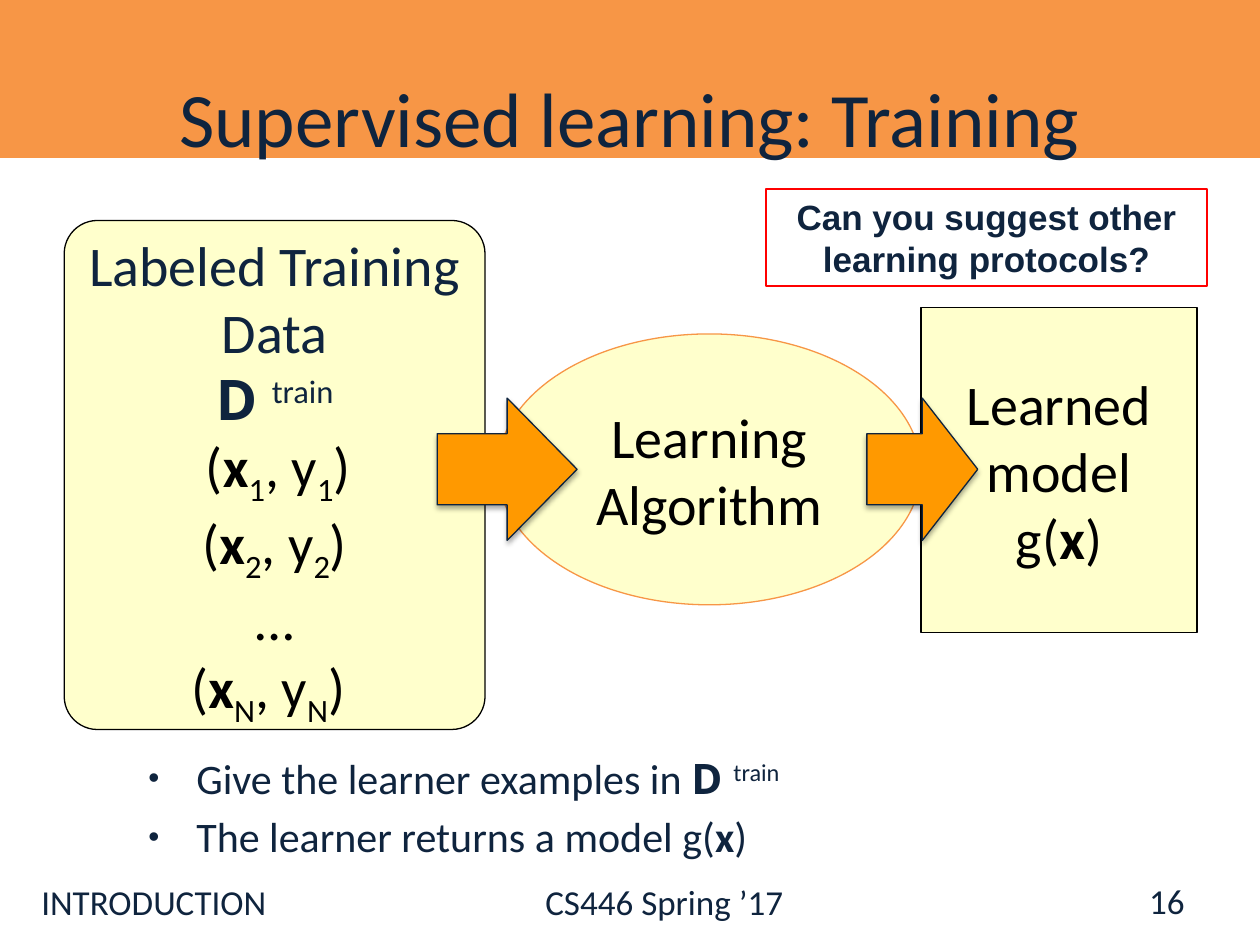
from lxml import etree
from pptx import Presentation, util as u
from pptx.dml.color import RGBColor
from pptx.enum import shapes, text
from pptx.oxml.ns import qn

NAVY, BLACK, ORANGE, CREAM = "0F243E", "000000", "F79646", "FFFFCC"
SHAPE, ALIGN, ANCHOR = shapes.MSO_SHAPE, text.PP_ALIGN, text.MSO_ANCHOR
BOLD, SUB, SUPER = {"bold": True}, {"base": -25}, {"base": 30}
D_TRAIN = [("D ", {"bold": True, "font": "Open Sans"}), ("train", SUPER)]
G_OF_X = [("g(", {}), ("x", BOLD), (")", {})]


def rgb(value):
    return RGBColor.from_string(value)


def inches(box):
    return [u.Inches(v) for v in box]


def child(parent, tag, **attrs):
    """Append a DrawingML element to parent."""
    return etree.SubElement(parent, qn(tag), {k: str(v) for k, v in attrs.items()})


def add_run(p, words, size, color, font="Calibri", bold=False, base=0):
    r = p.add_run()
    r.text = words
    r.font.size, r.font.name, r.font.bold = u.Pt(size), font, bold
    r.font.color.rgb = rgb(color)
    if base:
        r.font._element.set("baseline", str(base * 1000))


def write(sp, paragraphs, size=32, color=BLACK, font="Calibri", bold=False,
          align=ALIGN.CENTER, anchor=ANCHOR.MIDDLE, margins=(0.1, 0.05, 0.1, 0.05),
          bullet=False, before=0, tab=None):
    """Fill a shape; a paragraph is a string or a list of (text, format) runs."""
    tf = sp.text_frame
    tf.word_wrap, tf.vertical_anchor = True, anchor
    tf.margin_left, tf.margin_top, tf.margin_right, tf.margin_bottom = inches(margins)
    for i, runs in enumerate(paragraphs):
        p = tf.add_paragraph() if i else tf.paragraphs[0]
        p.alignment = align
        if i and before:
            p.space_before = u.Pt(before)
        if bullet:
            pPr = p._p.get_or_add_pPr()
            pPr.set("marL", str(u.Inches(0.38)))
            pPr.set("indent", str(u.Inches(-0.38)))
            child(pPr, "a:buSzPct", val=75000)
            child(pPr, "a:buFont", typeface="Arial")
            child(pPr, "a:buChar", char="•")
        if tab:
            tabs = child(p._p.get_or_add_pPr(), "a:tabLst")
            child(tabs, "a:tab", pos=u.Inches(tab), algn="l")
        for words, fmt in [(runs, {})] if isinstance(runs, str) else runs:
            if words == "\n":
                p.add_line_break()
            else:
                add_run(p, words, **{"size": size, "color": color, "font": font,
                                     "bold": bold, **fmt})


def add_box(s, kind, box, fill, line, width=0.75):
    sp = s.shapes.add_shape(kind, *inches(box))
    sp.shadow.inherit = False
    sp.fill.solid()
    sp.fill.fore_color.rgb = rgb(fill)
    sp.line.color.rgb = rgb(line)
    sp.line.width = u.Pt(width)
    return sp


def add_text(s, box, paragraphs, **fmt):
    write(s.shapes.add_textbox(*inches(box)), paragraphs, color=NAVY, **fmt)


def add_header(s, box):
    x, y, w, h = box
    add_box(s, SHAPE.RECTANGLE, box, ORANGE, ORANGE)
    add_text(s, (x + 0.5, y + 0.3, w - 1, h), ["Supervised learning: Training"], size=44)


def add_footer(s, box):
    x, y, w, h = box
    add_text(s, box, ["INTRODUCTION\tCS446 Spring ’17"], size=20,
             align=ALIGN.LEFT, anchor=ANCHOR.TOP, tab=4)
    add_text(s, (7.17, y + 0.01, 2.33, 0.4), ["16"], size=20, align=ALIGN.RIGHT)


def example(index):
    """Runs of one labeled pair (x, y)."""
    return [("(", {}), ("x", BOLD), (index, SUB), (", y", {}), (index, SUB), (")", {})]


def add_data(s, box):
    sp = add_box(s, SHAPE.ROUNDED_RECTANGLE, box, CREAM, BLACK)
    sp.adjustments[0] = 0.079
    navy = [(words, {**fmt, "color": NAVY})
            for words, fmt in [("Labeled Training Data", {}), ("\n", {}), *D_TRAIN]]
    first = navy + [("\n", {}), (" ", SUPER)] + example("1")
    write(sp, [first, example("2"), "…", example("N") + [(" ", {})]],
          anchor=ANCHOR.TOP, margins=(0, 0, 0, 0.05))


def add_arrow(s, box):
    sp = add_box(s, SHAPE.RIGHT_ARROW, box, "FF9900", NAVY)
    effects = sp._element.spPr.find(qn("a:effectLst"))
    shadow = child(effects, "a:outerShdw", blurRad=u.Pt(3.1), dist=u.Pt(1.8),
                   dir=90 * 60000, rotWithShape=0)
    child(child(shadow, "a:srgbClr", val=BLACK), "a:alpha", val=35000)


def add_flow(s, box):
    """Training data -> learning algorithm -> learned model."""
    x, y, w, h = box
    add_data(s, (x, y, 3.34, h))
    model = add_box(s, SHAPE.RECTANGLE, (x + w - 2.19, 2.44, 2.19, 2.58), CREAM, BLACK)
    write(model, ["Learned model", G_OF_X], margins=(0, 0, 0, 0))
    learner = add_box(s, SHAPE.OVAL, (3.95, 2.65, 3.36, 2.15), CREAM, ORANGE)
    write(learner, ["Learning Algorithm"], margins=(0, 0, 0, 0))
    for left, width in ((3.47, 1.11), (6.88, 0.88)):
        add_arrow(s, (left, 3.16, width, 1.13))


def add_question(s, box):
    sp = add_box(s, SHAPE.RECTANGLE, box, "FFFFFF", "FF0000", 1.5)
    write(sp, ["Can you suggest other learning protocols?"], size=20, color=NAVY,
          font="Arial", bold=True, anchor=ANCHOR.TOP)


def add_steps(s, box):
    add_text(s, box, [[("Give the learner examples in ", {}), *D_TRAIN],
                      [("The learner returns a model ", {}), *G_OF_X]],
             size=24, align=ALIGN.LEFT, anchor=ANCHOR.TOP, bullet=True, before=4.8)


def main():
    prs = Presentation()
    prs.slide_width, prs.slide_height = u.Inches(10), u.Inches(7.5)
    s = prs.slides.add_slide(prs.slide_layouts[6])
    add_footer(s, (0.23, 6.94, 9.6, 0.56))
    add_header(s, (0, 0, 10, 1.25))
    add_steps(s, (1.08, 5.92, 7.83, 1.25))
    add_flow(s, (0.51, 1.75, 8.99, 4.04))
    add_question(s, (6.08, 1.5, 3.5, 0.77))
    prs.save("out.pptx")


if __name__ == "__main__":
    main()
